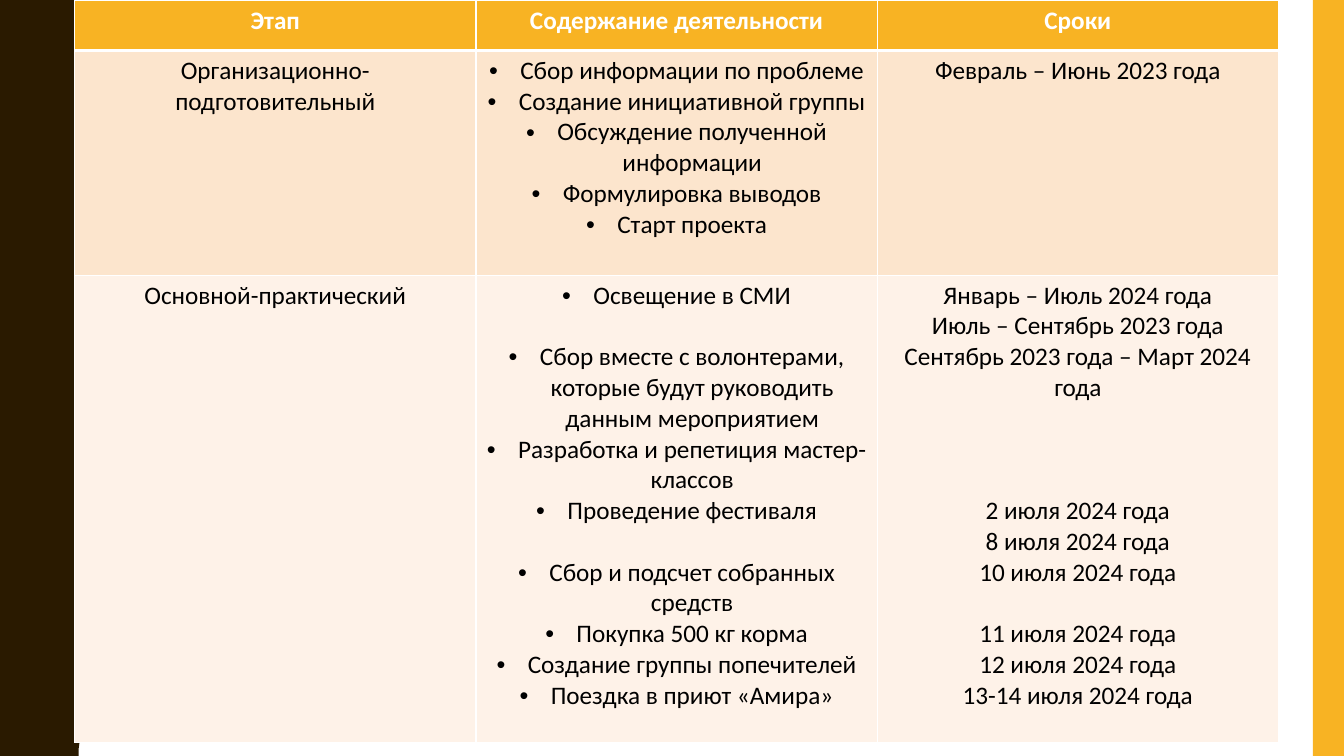
"""Build a slide with the project stages table."""
from dataclasses import dataclass

from lxml import etree
from pptx import Presentation
from pptx.dml.color import RGBColor
from pptx.enum.shapes import MSO_SHAPE
from pptx.enum.text import PP_ALIGN
from pptx.oxml.ns import qn
from pptx.util import Inches, Pt

RECT = MSO_SHAPE.RECTANGLE
CENTER = PP_ALIGN.CENTER
FONT, SIZE = "Calibri", 18
LINE_PT = 22
BROWN, AMBER, WHITE, BLACK = "2A1A00", "F8B323", "FFFFFF", "000000"
PEACH, CREAM = "FCE5CD", "FEF2E8"
WAVE_PERIOD, WAVE_COUNT = 1.5, 5
HALF_WAVE = [
    (0.78, 0), (0.78, 0.07), (0.79, 0.14), (0.8, 0.2), (0.81, 0.25),
    (0.83, 0.29), (0.85, 0.33), (0.87, 0.38), (0.89, 0.42), (0.91, 0.46),
    (0.93, 0.5), (0.95, 0.55), (0.96, 0.61), (0.97, 0.68), (0.97, 0.75),
]


@dataclass
class Line:
    text: str
    gap: int = 0


@dataclass
class Row:
    height: float
    fill: str
    color: str
    cells: list[list[Line]]
    top: int = 1
    bottom: int = 1
    bold: bool = False
    bulleted: bool = True


ROWS = [
    Row(0.5, AMBER, WHITE,
        [[Line("Этап")], [Line("Содержание деятельности")], [Line("Сроки")]],
        bottom=3, bold=True, bulleted=False),
    Row(2.23, PEACH, BLACK, [
        [Line("Организационно-подготовительный")],
        [Line("Сбор информации по проблеме"),
         Line("Создание инициативной группы"),
         Line("Обсуждение полученной информации"),
         Line("Формулировка выводов"),
         Line("Старт проекта")],
        [Line("Февраль – Июнь 2023 года")],
    ], top=3),
    Row(4.64, CREAM, BLACK, [
        [Line("Основной-практический")],
        [Line("Освещение в СМИ"),
         Line("Сбор вместе с волонтерами, которые будут руководить "
              "данным мероприятием", 1),
         Line("Разработка и репетиция мастер-классов"),
         Line("Проведение фестиваля"),
         Line("Сбор и подсчет собранных средств", 1),
         Line("Покупка 500 кг корма"),
         Line("Создание группы попечителей"),
         Line("Поездка в приют «Амира»")],
        [Line("Январь – Июль 2024 года"),
         Line("Июль – Сентябрь 2023 года"),
         Line("Сентябрь 2023 года – Март 2024 года"),
         Line("2 июля 2024 года", 3),
         Line("8 июля 2024 года"),
         Line("10 июля 2024 года"),
         Line("11 июля 2024 года", 1),
         Line("12 июля 2024 года"),
         Line("13-14 июля 2024 года")],
    ]),
]


def rgb(value: str) -> RGBColor:
    return RGBColor.from_string(value)


def paint(sp, color: str) -> None:
    sp.shadow.inherit = False
    sp.fill.solid()
    sp.fill.fore_color.rgb = rgb(color)
    sp.line.fill.background()


def add_wavy_band(s) -> None:
    wave = HALF_WAVE + [(x, WAVE_PERIOD - y) for x, y in HALF_WAVE[-2::-1]]
    edge = [(Inches(x), Inches(y + i * WAVE_PERIOD))
            for i in range(WAVE_COUNT) for x, y in wave]
    builder = s.shapes.build_freeform(0, 0)
    builder.add_line_segments(edge + [(0, Inches(7.5))], close=True)
    paint(builder.convert_to_shape(), BROWN)


def add_bullet(p) -> None:
    pPr = p._p.get_or_add_pPr()
    pPr.set("marL", str(Inches(0.31)))
    pPr.set("indent", str(Inches(-0.31)))
    etree.SubElement(pPr, qn("a:buFont"), typeface="Arial")
    etree.SubElement(pPr, qn("a:buChar"), char="•")


def set_borders(cell, top: int, bottom: int) -> None:
    tcPr = cell._tc.get_or_add_tcPr()
    sides = {"a:lnL": 1, "a:lnR": 1, "a:lnT": top, "a:lnB": bottom}
    for i, (tag, width) in enumerate(sides.items()):
        ln = etree.Element(qn(tag), w=str(Pt(width)))
        fill = etree.SubElement(ln, qn("a:solidFill"))
        etree.SubElement(fill, qn("a:srgbClr"), val=WHITE)
        tcPr.insert(i, ln)


def fill_cell(cell, row: Row, lines: list[Line], bulleted: bool) -> None:
    cell.fill.solid()
    cell.fill.fore_color.rgb = rgb(row.fill)
    set_borders(cell, row.top, row.bottom)
    tf = cell.text_frame
    tf.text = "\n".join(line.text for line in lines)
    for p, line in zip(tf.paragraphs, lines):
        if bulleted:
            add_bullet(p)
        p.alignment = CENTER
        if line.gap:
            p.space_before = Pt(line.gap * LINE_PT)
        for r in p.runs:
            r.font.name = FONT
            r.font.size = Pt(SIZE)
            r.font.bold = row.bold
            r.font.color.rgb = rgb(row.color)


def add_stage_table(s) -> None:
    table = s.shapes.add_table(len(ROWS), 3, Inches(0.74), 0,
                               Inches(11.94), Inches(7.37)).table
    for column in table.columns:
        column.width = Inches(3.98)
    for i, row in enumerate(ROWS):
        table.rows[i].height = Inches(row.height)
        for j, lines in enumerate(row.cells):
            fill_cell(table.cell(i, j), row, lines, row.bulleted and j == 1)


def main() -> None:
    prs = Presentation()
    prs.slide_width, prs.slide_height = Inches(13.33), Inches(7.5)
    s = prs.slides.add_slide(prs.slide_layouts[6])
    add_wavy_band(s)
    paint(s.shapes.add_shape(RECT, Inches(13.02), 0, Inches(0.31), Inches(7.5)), AMBER)
    add_stage_table(s)
    prs.save("out.pptx")


if __name__ == "__main__":
    main()
